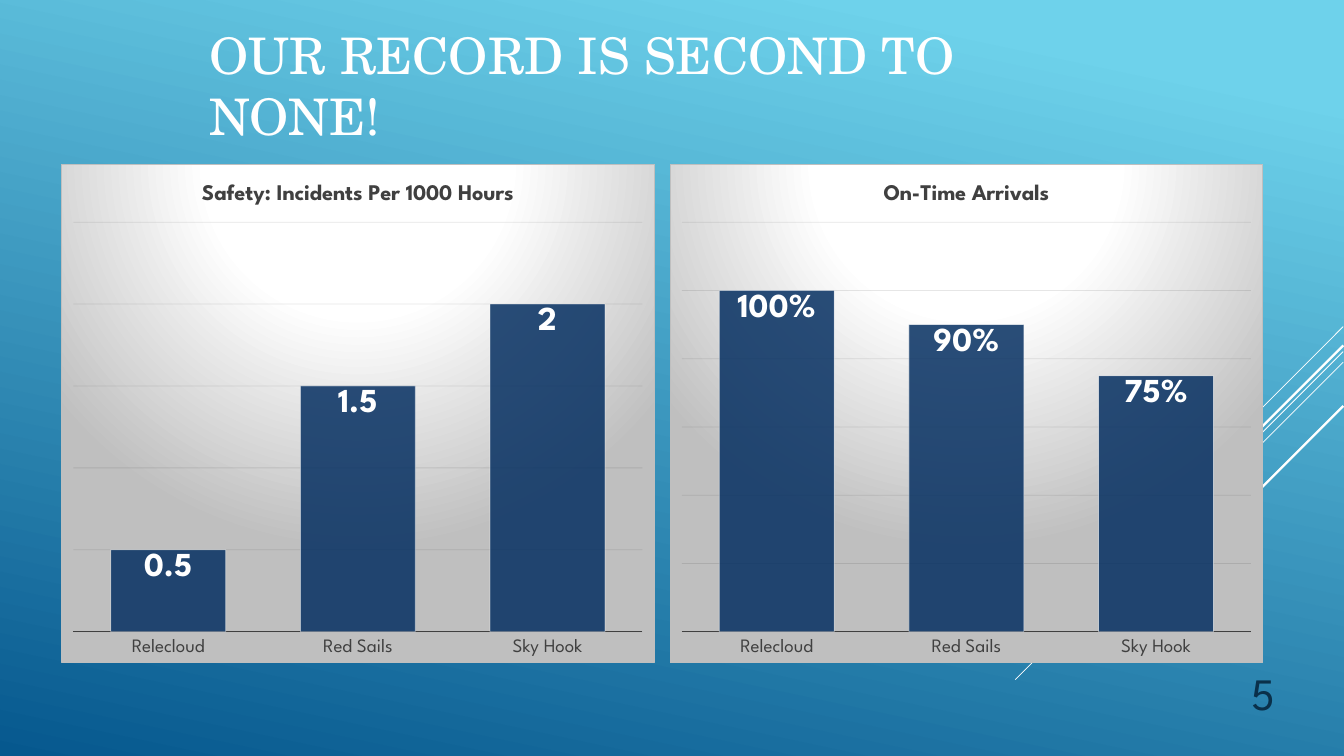
from lxml import etree
from pptx import Presentation
from pptx.chart.data import CategoryChartData
from pptx.dml.color import RGBColor
from pptx.enum.chart import XL_CHART_TYPE, XL_LABEL_POSITION, XL_TICK_LABEL_POSITION, XL_TICK_MARK
from pptx.enum.shapes import MSO_CONNECTOR
from pptx.enum.text import MSO_ANCHOR, PP_ALIGN
from pptx.oxml import parse_xml
from pptx.oxml.ns import nsdecls, qn
from pptx.util import Inches, Pt

COLUMN = XL_CHART_TYPE.COLUMN_CLUSTERED
INSIDE_END = XL_LABEL_POSITION.INSIDE_END
LABELS_LOW = XL_TICK_LABEL_POSITION.LOW
NO_TICK = XL_TICK_MARK.NONE
STRAIGHT = MSO_CONNECTOR.STRAIGHT

COLORS = {
    "sky": "6ED2EB", "ocean": "06588E", "white": "FFFFFF", "navy": "052F61",
    "text": "404040", "grid": "0D0D0D", "silver": "BFBFBF", "number": "0A304A",
}
BODY_FONT = "League Spartan"
TITLE_FONT = "TeX Gyre Schola"


def style_font(font, size, color, name=BODY_FONT, bold=False):
    font.size = Pt(size)
    font.color.rgb = RGBColor.from_string(COLORS[color])
    font.name = name
    font.bold = bold


def set_alpha(color_element, percent):
    etree.SubElement(color_element, qn("a:alpha")).set("val", str(percent * 1000))


presentation = Presentation()
presentation.slide_width = Inches(17.78)
presentation.slide_height = Inches(10)
slide = presentation.slides.add_slide(presentation.slide_layouts[5])

background = slide.background.fill
background.gradient()
background.gradient_angle = 258
for stop, position, color in zip(background.gradient_stops, (0.1, 1), ("sky", "ocean")):
    stop.position = position
    stop.color.rgb = RGBColor.from_string(COLORS[color])

diagonals = [(4.32, 1.33, 0.75), (4.65, 4.34, 0.75), (4.79, 2.76, 0.75),
             (4.57, 2.54, 2.25), (5.37, 1.85, 2.25)]
for top, reach, width in diagonals:
    line = slide.shapes.add_connector(
        STRAIGHT, Inches(17.77), Inches(top), Inches(17.77 - reach), Inches(top + reach))
    line.line.color.rgb = RGBColor.from_string(COLORS["white"])
    line.line.width = Pt(width)
    etree.SubElement(line._element.spPr, qn("a:effectLst"))

title = slide.shapes.title
title.left, title.top = Inches(2.67), Inches(0.02)
title.width, title.height = Inches(12.44), Inches(2.2)
title.text_frame.text = "OUR RECORD IS SECOND TO NONE!"
title.text_frame.vertical_anchor = MSO_ANCHOR.MIDDLE
title.text_frame.paragraphs[0].alignment = PP_ALIGN.LEFT
style_font(title.text_frame.paragraphs[0].runs[0].font, 48, "white", TITLE_FONT)

charts = [
    (0.81, "Safety: Incidents Per 1000 Hours", (0.5, 1.5, 2), "General", 2.5, 0.5),
    (8.86, "On-Time Arrivals", (1, 0.9, 0.75), "0%", 1.2, 0.2),
]
for left, heading, values, number_format, maximum, step in charts:
    data = CategoryChartData(number_format=number_format)
    data.categories = ["Relecloud", "Red Sails", "Sky Hook"]
    data.add_series("Series 1", values)
    chart = slide.shapes.add_chart(
        COLUMN, Inches(left), Inches(2.17), Inches(7.85), Inches(6.6), data).chart
    style_font(chart.font, 10, "white")
    chart.has_legend = False
    chart.has_title = True
    chart.chart_title.text_frame.text = heading
    style_font(chart.chart_title.text_frame.paragraphs[0].runs[0].font, 21.3, "text", bold=True)

    category_axis = chart.category_axis
    category_axis.major_tick_mark = NO_TICK
    category_axis.tick_label_position = LABELS_LOW
    category_axis.format.line.color.rgb = RGBColor.from_string(COLORS["text"])
    category_axis.format.line.width = Pt(1.5)
    style_font(category_axis.tick_labels.font, 18, "text")

    value_axis = chart.value_axis
    value_axis.visible = False
    value_axis.minimum_scale = 0
    value_axis.maximum_scale = maximum
    value_axis.major_unit = step
    grid_line = value_axis.major_gridlines.format.line
    grid_line.color.rgb = RGBColor.from_string(COLORS["grid"])
    grid_line.width = Pt(0.75)
    set_alpha(value_axis._element.xpath("c:majorGridlines//a:srgbClr")[0], 10)

    plot = chart.plots[0]
    plot.gap_width = 65
    plot.vary_by_categories = False
    series = plot.series[0]
    series.format.fill.solid()
    series.format.fill.fore_color.rgb = RGBColor.from_string(COLORS["navy"])
    series.format.line.color.rgb = RGBColor.from_string(COLORS["white"])
    series.format.line.width = Pt(0.75)
    for color_element, percent in zip(series._element.spPr.iter(qn("a:srgbClr")), (85, 50)):
        set_alpha(color_element, percent)
    labels = series.data_labels
    labels.show_value = True
    labels.position = INSIDE_END
    labels.number_format = number_format
    labels.number_format_is_linked = False
    style_font(labels.font, 32, "white", bold=True)

    plot_area = chart._chartSpace.chart.plotArea
    for old_layout in plot_area.findall(qn("c:layout")):
        plot_area.remove(old_layout)
    plot_area.insert(0, parse_xml(
        f'<c:layout {nsdecls("c")}><c:manualLayout><c:layoutTarget val="inner"/>'
        '<c:xMode val="edge"/><c:yMode val="edge"/><c:x val="0.02"/><c:y val="0.116"/>'
        '<c:w val="0.96"/><c:h val="0.822"/></c:manualLayout></c:layout>'))
    stops = "".join(
        f'<a:gs pos="{position * 1000}"><a:srgbClr val="{COLORS[color]}"/></a:gs>'
        for position, color in ((0, "white"), (39, "white"), (100, "silver")))
    chart._chartSpace.chart.addnext(parse_xml(
        f'<c:spPr {nsdecls("c", "a")}><a:gradFill><a:gsLst>{stops}</a:gsLst>'
        '<a:path path="circle"><a:fillToRect l="50000" t="-80000" r="50000" b="180000"/></a:path>'
        f'</a:gradFill><a:ln w="9525"><a:solidFill><a:srgbClr val="{COLORS["silver"]}"/>'
        '</a:solidFill></a:ln></c:spPr>'))

number_box = slide.shapes.add_textbox(Inches(15.31), Inches(8.58), Inches(1.66), Inches(0.98))
number_box.text_frame.word_wrap = True
number_box.text_frame.vertical_anchor = MSO_ANCHOR.BOTTOM
number_box.text_frame.text = "5"
number_box.text_frame.paragraphs[0].alignment = PP_ALIGN.RIGHT
style_font(number_box.text_frame.paragraphs[0].runs[0].font, 42.7, "number")

presentation.save("out.pptx")
